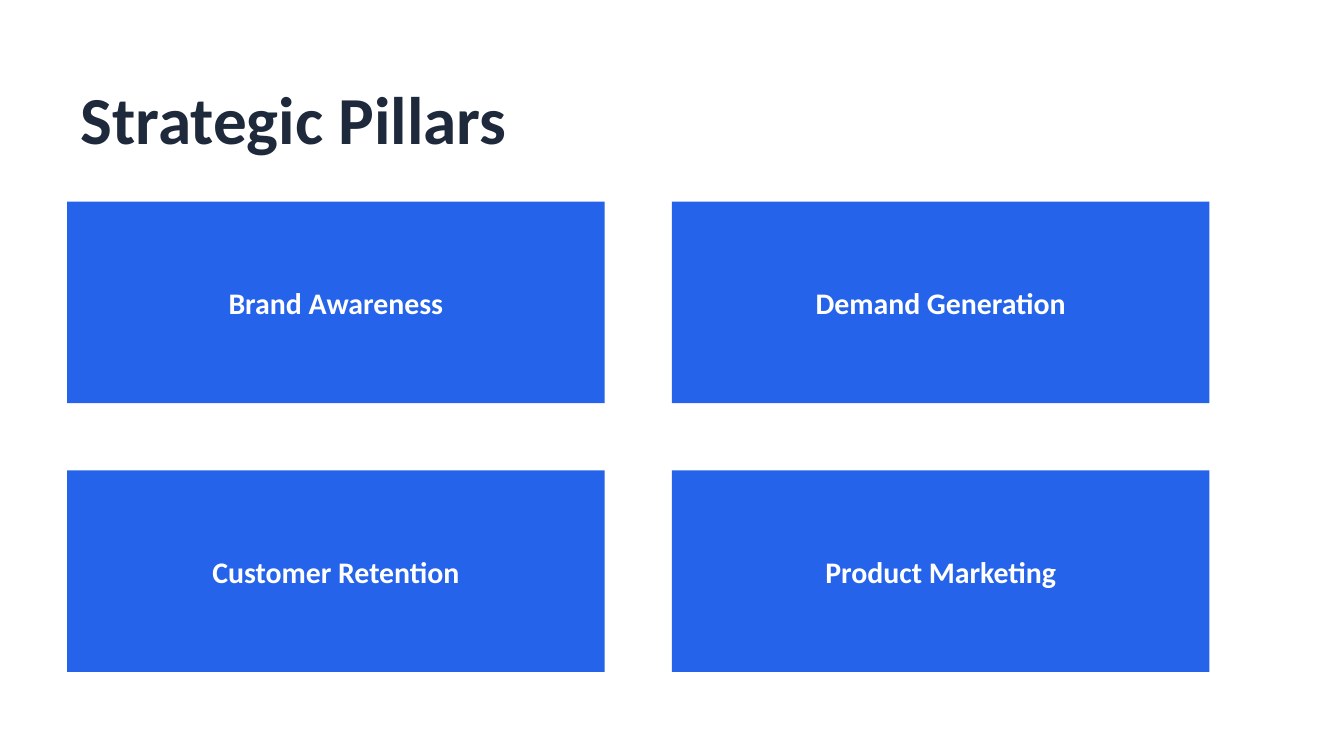
"""Build the Strategic Pillars slide with a two-by-two grid of pillars."""
import dataclasses

import pptx
import pptx.dml.color
import pptx.enum.shapes
import pptx.enum.text
import pptx.util
from pptx.util import Inches


@dataclasses.dataclass(frozen=True)
class Theme:
    font: str = "Calibri"
    background: str = "FFFFFF"
    title_color: str = "1E293B"
    pillar_fill: str = "2563EB"
    pillar_text: str = "FFFFFF"
    title_size: int = 36
    pillar_size: int = 16


theme = Theme()


def color(value):
    return pptx.dml.color.RGBColor.from_string(value)


def write(shape, text, size, text_color, alignment):
    frame = shape.text_frame
    frame.text = text
    frame.word_wrap = True
    frame.auto_size = pptx.enum.text.MSO_AUTO_SIZE.NONE
    frame.vertical_anchor = pptx.enum.text.MSO_ANCHOR.MIDDLE
    para = frame.paragraphs[0]
    para.alignment = alignment
    font = para.runs[0].font
    font.name = theme.font
    font.size = pptx.util.Pt(size)
    font.bold = True
    font.color.rgb = color(text_color)


deck = pptx.Presentation()
deck.slide_width = Inches(10)
deck.slide_height = Inches(10 * 9 / 16)
slide = deck.slides.add_slide(deck.slide_layouts.get_by_name("Title Only"))
slide.background.fill.solid()
slide.background.fill.fore_color.rgb = color(theme.background)

title = slide.shapes.title
title.left, title.top = Inches(0.5), Inches(0.5)
title.width, title.height = Inches(9), Inches(0.75)
write(title, "Strategic Pillars", theme.title_size, theme.title_color,
      pptx.enum.text.PP_ALIGN.LEFT)

pillars = ["Brand Awareness", "Demand Generation",
           "Customer Retention", "Product Marketing"]
left, top, width, height, gap = 0.5, 1.5, 4, 1.5, 0.5

for index, name in enumerate(pillars):
    row, column = divmod(index, 2)
    box = slide.shapes.add_shape(
        pptx.enum.shapes.MSO_SHAPE.RECTANGLE,
        Inches(left + column * (width + gap)),
        Inches(top + row * (height + gap)),
        Inches(width), Inches(height))
    box.shadow.inherit = False
    box.fill.solid()
    box.fill.fore_color.rgb = color(theme.pillar_fill)
    box.line.fill.background()
    write(box, name, theme.pillar_size, theme.pillar_text,
          pptx.enum.text.PP_ALIGN.CENTER)

deck.save("out.pptx")
